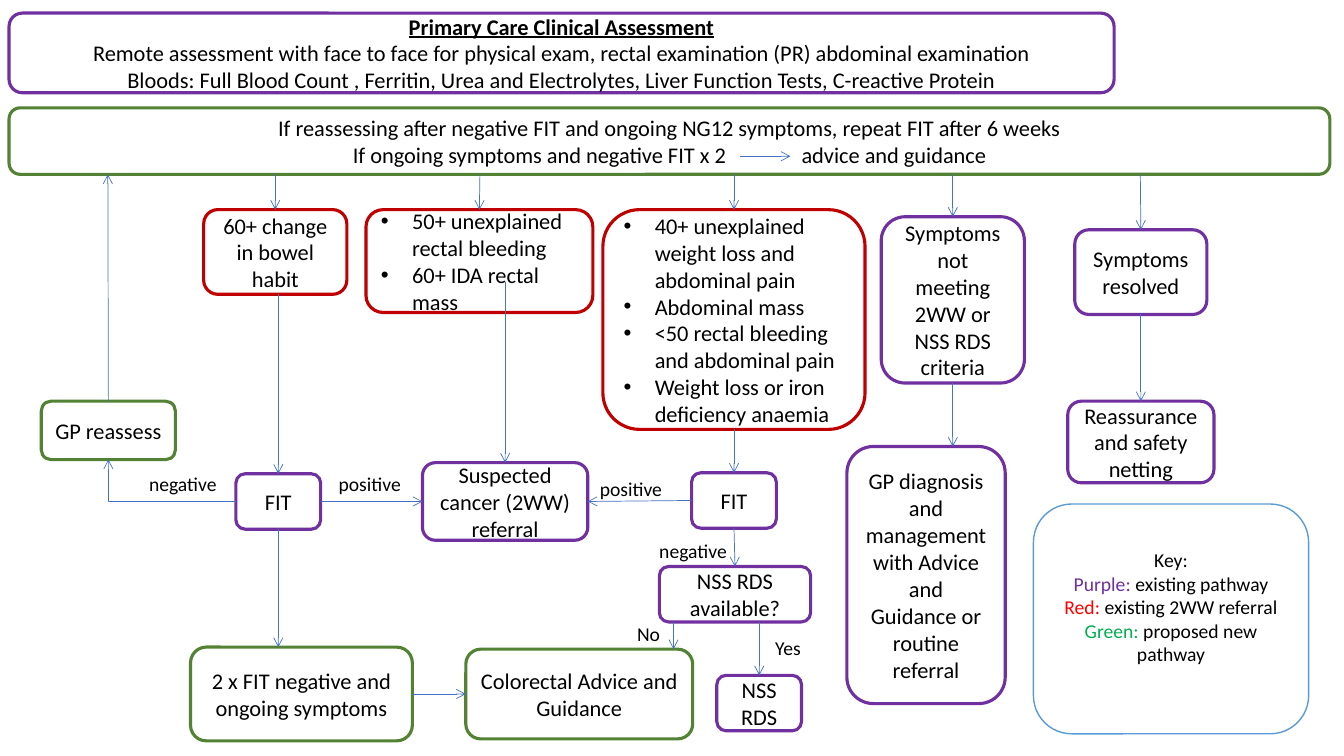
from dataclasses import dataclass
from typing import Optional, Tuple, Union

from lxml.etree import SubElement
from pptx import Presentation
from pptx.dml.color import RGBColor
from pptx.enum.shapes import MSO_CONNECTOR, MSO_SHAPE
from pptx.enum.text import MSO_ANCHOR, PP_ALIGN
from pptx.oxml.ns import qn
from pptx.util import Emu, Pt

SCALE = 9144
PURPLE = RGBColor(0x70, 0x30, 0xA0)
GREEN = RGBColor(0x54, 0x82, 0x35)
RED = RGBColor(0xC0, 0x00, 0x00)
BLUE = RGBColor(0x44, 0x72, 0xC4)
SKY = RGBColor(0x5B, 0x9B, 0xD5)
BRIGHT = RGBColor(0xFF, 0x00, 0x00)
LEAF = RGBColor(0x00, 0xB0, 0x50)
BLACK = RGBColor(0, 0, 0)
WHITE = RGBColor(0xFF, 0xFF, 0xFF)
TOP, LEFT, BOTTOM, RIGHT = range(4)


@dataclass
class Tint:
    word: str
    color: RGBColor
    rest: str


@dataclass
class Box:
    name: str
    x: int
    y: int
    w: int
    h: int
    color: RGBColor
    lines: Tuple[Union[str, Tint], ...]
    size: int = 16
    edge: float = 2.25
    dots: bool = False
    foot: int = 5


@dataclass
class Spot:
    x: int
    y: int


@dataclass
class Side:
    name: str
    site: int


@dataclass
class Arrow:
    start: Union[Spot, Side]
    end: Union[Spot, Side]
    bent: bool = False


@dataclass
class Label:
    x: int
    y: int
    w: int
    text: str


BOXES = [
    Box("title", 9, 13, 1096, 79, PURPLE, (
        "Primary Care Clinical Assessment",
        "Remote assessment with face to face for physical exam, rectal examination (PR) abdominal examination",
        "Bloods: Full Blood Count , Ferritin, Urea and Electrolytes, Liver Function Tests, C-reactive Protein")),
    Box("bar", 9, 107, 1310, 66, GREEN, (
        "If reassessing after negative FIT and ongoing NG12 symptoms, repeat FIT after 6 weeks",
        "\tIf ongoing symptoms and negative FIT x 2\tadvice and guidance")),
    Box("bowel", 202, 208, 142, 84, RED, ("60+ change in bowel habit",)),
    Box("bleed", 363, 208, 225, 102, RED, (
        "50+ unexplained rectal bleeding", "60+ IDA rectal mass"), dots=True),
    Box("weight", 598, 208, 260, 218, RED, (
        "40+ unexplained weight loss and abdominal pain", "Abdominal mass",
        "<50 rectal bleeding and abdominal pain",
        "Weight loss or iron deficiency anaemia"), dots=True),
    Box("unmet", 874, 215, 142, 165, PURPLE, ("Symptoms not meeting 2WW or NSS RDS criteria",)),
    Box("solved", 1066, 228, 131, 84, PURPLE, ("Symptoms resolved",)),
    Box("safe", 1059, 398, 145, 81, PURPLE, ("Reassurance and safety netting",)),
    Box("manage", 840, 443, 157, 255, PURPLE, (
        "GP diagnosis and management with Advice and Guidance or routine referral",)),
    Box("right fit", 686, 469, 84, 55, PURPLE, ("FIT",)),
    Box("query", 654, 562, 150, 55, PURPLE, ("NSS RDS available?",)),
    Box("service", 711, 670, 84, 55, PURPLE, ("NSS RDS",)),
    Box("cancer", 419, 459, 164, 77, PURPLE, ("Suspected cancer (2WW) referral",)),
    Box("left fit", 234, 470, 84, 55, PURPLE, ("FIT",)),
    Box("review", 41, 398, 133, 58, GREEN, ("GP reassess",)),
    Box("key", 1025, 500, 273, 228, SKY, (
        "Key:", Tint("Purple:", PURPLE, " existing pathway"),
        Tint("Red:", BRIGHT, " existing 2WW referral"),
        Tint("Green:", LEAF, " proposed new pathway")), size=14, edge=1, foot=29),
    Box("advice", 462, 644, 225, 89, GREEN, ("Colorectal Advice and Guidance",)),
    Box("repeat", 189, 642, 220, 93, GREEN, ("2 x FIT negative and ongoing symptoms",)),
]

ARROWS = [
    Arrow(Spot(734, 155), Spot(784, 155)),
    Arrow(Spot(1131, 173), Side("solved", TOP)),
    Arrow(Side("solved", BOTTOM), Side("safe", TOP)),
    Arrow(Spot(945, 173), Side("unmet", TOP)),
    Arrow(Side("unmet", BOTTOM), Spot(945, 443)),
    Arrow(Spot(728, 173), Side("weight", TOP)),
    Arrow(Spot(476, 173), Side("bleed", TOP)),
    Arrow(Spot(273, 173), Side("bowel", TOP)),
    Arrow(Spot(753, 617), Side("service", TOP)),
    Arrow(Spot(501, 280), Side("cancer", TOP)),
    Arrow(Side("right fit", LEFT), Side("cancer", RIGHT)),
    Arrow(Spot(276, 292), Side("left fit", TOP)),
    Arrow(Side("left fit", RIGHT), Side("cancer", LEFT)),
    Arrow(Side("review", TOP), Spot(107, 173)),
    Arrow(Side("left fit", LEFT), Side("review", BOTTOM), bent=True),
    Arrow(Side("left fit", BOTTOM), Spot(276, 642)),
    Arrow(Side("repeat", RIGHT), Side("advice", LEFT)),
    Arrow(Spot(668, 617), Spot(668, 644)),
    Arrow(Side("weight", BOTTOM), Side("right fit", TOP)),
    Arrow(Side("right fit", BOTTOM), Side("query", TOP)),
]

LABELS = [
    Label(585, 468, 128, "positive"),
    Label(138, 463, 103, "negative"),
    Label(326, 463, 128, "positive"),
    Label(644, 530, 103, "negative"),
    Label(759, 626, 60, "Yes"),
    Label(622, 612, 60, "No"),
]


def px(count: int) -> Emu:
    return Emu(count * SCALE)


def style(para, size: int) -> None:
    font = para.font
    font.name, font.size = "Calibri", Pt(size)
    font.color.rgb = BLACK


def add_dot(para) -> None:
    props = para._p.get_or_add_pPr()
    props.set("marL", str(px(31)))
    props.set("indent", str(px(-31)))
    SubElement(props, qn("a:buFont"), typeface="Arial")
    SubElement(props, qn("a:buChar"), char="•")


def add_tabs(para, *stops: int) -> None:
    tabs = SubElement(para._p.get_or_add_pPr(), qn("a:tabLst"))
    for stop in stops:
        SubElement(tabs, qn("a:tab"), pos=str(px(stop)), algn="l")


def write(frame, box: Box) -> None:
    for i, line in enumerate(box.lines):
        para = frame.add_paragraph() if i else frame.paragraphs[0]
        tabbed = isinstance(line, str) and "\t" in line
        para.alignment = PP_ALIGN.LEFT if box.dots or tabbed else PP_ALIGN.CENTER
        if box.dots:
            add_dot(para)
        if tabbed:
            add_tabs(para, 328, 773)
        style(para, box.size)
        if isinstance(line, Tint):
            run = para.add_run()
            run.text = line.word
            run.font.color.rgb = line.color
            para.add_run().text = line.rest
        else:
            para.add_run().text = line


def add_box(shapes, box: Box):
    shape = shapes.add_shape(MSO_SHAPE.ROUNDED_RECTANGLE, px(box.x), px(box.y), px(box.w), px(box.h))
    shape.shadow.inherit = False
    shape.fill.solid()
    shape.fill.fore_color.rgb = WHITE
    shape.line.color.rgb = box.color
    shape.line.width = Pt(box.edge)
    frame = shape.text_frame
    frame.word_wrap = True
    frame.vertical_anchor = MSO_ANCHOR.MIDDLE
    frame.margin_bottom = px(box.foot)
    write(frame, box)
    return shape


def place(end: Union[Spot, Side]) -> Tuple[Emu, Emu]:
    return (px(end.x), px(end.y)) if isinstance(end, Spot) else (px(0), px(0))


def add_arrow(shapes, arrow: Arrow, drawn: dict) -> None:
    kind = MSO_CONNECTOR.ELBOW if arrow.bent else MSO_CONNECTOR.STRAIGHT
    link = shapes.add_connector(kind, *place(arrow.start), *place(arrow.end))
    for end, join in ((arrow.start, link.begin_connect), (arrow.end, link.end_connect)):
        if isinstance(end, Side):
            join(drawn[end.name], end.site)
    link.line.color.rgb = BLUE
    link.line.width = Pt(0.5)
    props = link._element.spPr
    if arrow.bent:
        props.find(qn("a:prstGeom")).set("prst", "bentConnector2")
    SubElement(link.line._get_or_add_ln(), qn("a:tailEnd"), type="arrow")
    SubElement(props, qn("a:effectLst"))


def add_label(shapes, label: Label) -> None:
    frame = shapes.add_textbox(px(label.x), px(label.y), px(label.w), px(34)).text_frame
    frame.word_wrap = True
    para = frame.paragraphs[0]
    style(para, 14)
    para.add_run().text = label.text


def main(slide: Optional[object] = None) -> None:
    deck = Presentation()
    deck.slide_width, deck.slide_height = px(1333), px(750)
    shapes = deck.slides.add_slide(deck.slide_layouts[6]).shapes
    drawn = {box.name: add_box(shapes, box) for box in BOXES}
    head = drawn["title"].text_frame.paragraphs[0].font
    head.bold = head.underline = True
    for arrow in ARROWS:
        add_arrow(shapes, arrow, drawn)
    for label in LABELS:
        add_label(shapes, label)
    deck.save("out.pptx")


if __name__ == "__main__":
    main()
